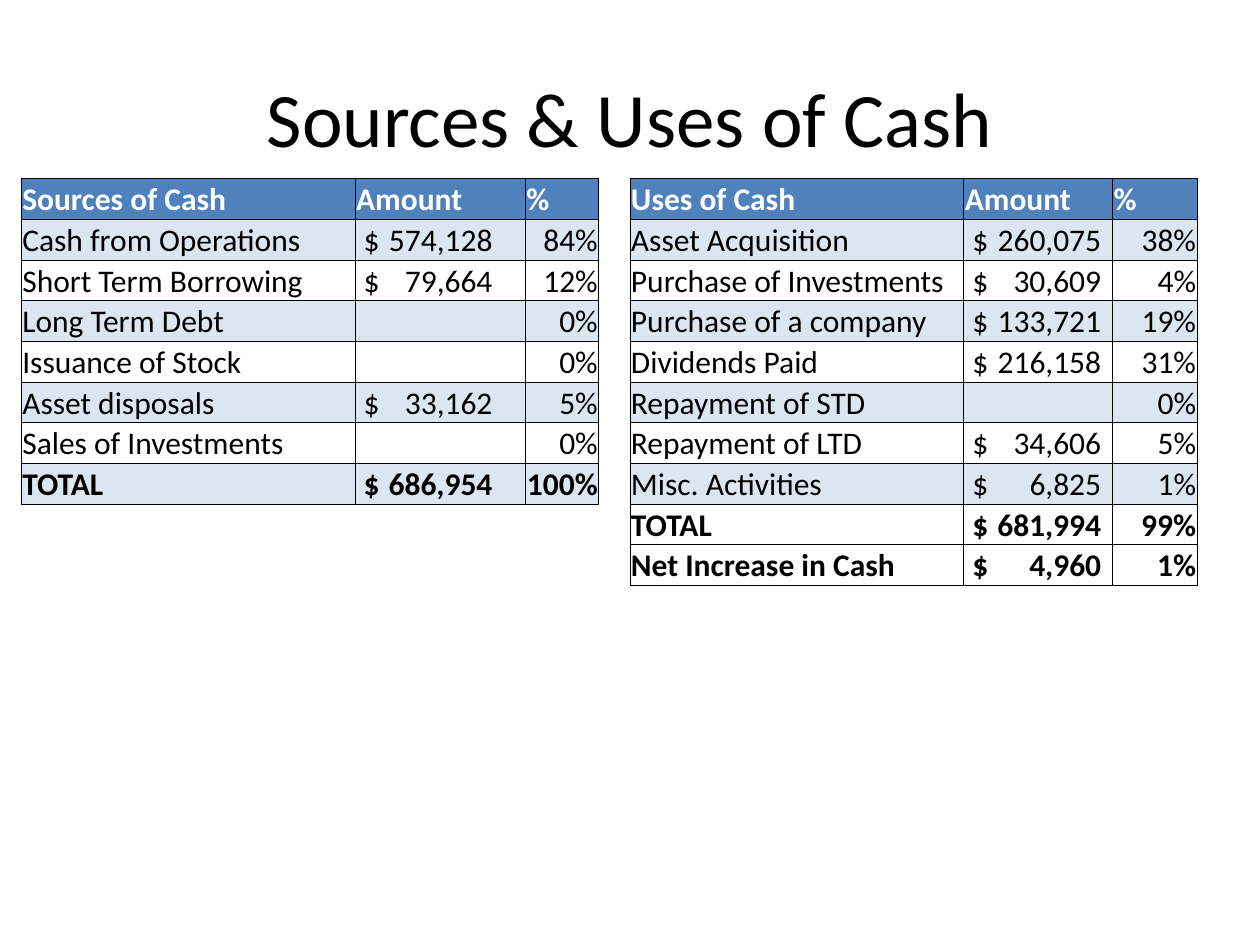
import pptx
import pptx.util
import pptx.dml.color
import pptx.enum.text
import lxml.etree

Cm = pptx.util.Cm
Pt = pptx.util.Pt
Align = pptx.enum.text.PP_ALIGN
Anchor = pptx.enum.text.MSO_ANCHOR
NS = "http://schemas.openxmlformats.org/drawingml/2006/main"

# Amounts are split into sign and number at a right tab stop.
SOURCES = [
    ("Sources of Cash", "Amount", "%"),
    ("Cash from Operations", "574,128", "84%"),
    ("Short Term Borrowing", "79,664", "12%"),
    ("Long Term Debt", "", "0%"),
    ("Issuance of Stock", "", "0%"),
    ("Asset disposals", "33,162", "5%"),
    ("Sales of Investments", "", "0%"),
    ("TOTAL", "686,954", "100%"),
]
USES = [
    ("Uses of Cash", "Amount", "%"),
    ("Asset Acquisition", "260,075", "38%"),
    ("Purchase of Investments", "30,609", "4%"),
    ("Purchase of a company", "133,721", "19%"),
    ("Dividends Paid", "216,158", "31%"),
    ("Repayment of STD", "", "0%"),
    ("Repayment of LTD", "34,606", "5%"),
    ("Misc. Activities", "6,825", "1%"),
    ("TOTAL", "681,994", "99%"),
    ("Net Increase in Cash", "4,960", "1%"),
]
BOLD = ("TOTAL", "Net Increase in Cash")


def color(code):
    return pptx.dml.color.RGBColor.from_string(code)


def node(parent, tag, **attrs):
    return lxml.etree.SubElement(parent, f"{{{NS}}}{tag}", **attrs)


class Deck:
    font = "Calibri"
    ink, head, band, white = "000000", "4F81BD", "DCE6F1", "FFFFFF"
    row = 0.82

    def __init__(self, slide):
        self.slide = slide

    def run(self, para, text, size, tint, bold=False):
        run = para.add_run()
        run.text = text
        run.font.name = self.font
        run.font.size = Pt(size)
        run.font.bold = bold
        run.font.color.rgb = color(tint)

    def title(self, text, left, top, width, height):
        box = self.slide.shapes.add_textbox(Cm(left), Cm(top), Cm(width), Cm(height))
        frame = box.text_frame
        frame.word_wrap = True
        frame.vertical_anchor = Anchor.MIDDLE
        para = frame.paragraphs[0]
        para.alignment = Align.CENTER
        self.run(para, text, 44, self.ink)

    def border(self, cell):
        """Draw a thin line on all four sides; call before the fill is set."""
        props = cell._tc.get_or_add_tcPr()
        for side in ("lnL", "lnR", "lnT", "lnB"):
            line = node(props, side, w=str(Pt(0.5)))
            node(node(line, "solidFill"), "srgbClr", val=self.ink)

    def cell(self, cell, text, fill, tint, bold, kind):
        """Fill one cell; kind is "text", "money" or "share"."""
        cell.margin_left = Cm(0.17 if kind == "money" else 0.02)
        cell.margin_right = cell.margin_top = Cm(0.02)
        cell.margin_bottom = 0
        cell.vertical_anchor = Anchor.BOTTOM
        self.border(cell)
        if fill:
            cell.fill.solid()
            cell.fill.fore_color.rgb = color(fill)
        else:
            cell.fill.background()
        if not text:
            return
        para = cell.text_frame.paragraphs[0]
        para.alignment = Align.RIGHT if kind == "share" else Align.LEFT
        if kind == "money":
            tabs = node(para._p.get_or_add_pPr(), "tabLst")
            node(tabs, "tab", pos=str(Cm(2.6)), algn="r")
            text = "$\t" + text
        self.run(para, text, 18, tint, bold)

    def table(self, rows, left, top, widths):
        frame = self.slide.shapes.add_table(
            len(rows), len(widths), Cm(left), Cm(top),
            Cm(sum(widths)), Cm(self.row * len(rows)))
        table = frame.table
        table.first_row = table.horz_banding = False
        for col, width in zip(table.columns, widths):
            col.width = Cm(width)
        for i, row in enumerate(rows):
            table.rows[i].height = Cm(self.row)
            first = i == 0
            shade = i % 2 and row[0] != "Net Increase in Cash"
            fill = self.head if first else self.band if shade else None
            tint = self.white if first else self.ink
            bold = first or row[0] in BOLD
            kinds = ["text"] * 3 if first else ["text", "money", "share"]
            for j, (text, kind) in enumerate(zip(row, kinds)):
                self.cell(table.cell(i, j), text, fill, tint, bold, kind)


def main():
    show = pptx.Presentation()
    show.slide_width, show.slide_height = Cm(25.4), Cm(19.05)
    deck = Deck(show.slides.add_slide(show.slide_layouts[6]))
    deck.title("Sources & Uses of Cash", 1.27, 0.76, 22.86, 3.18)
    deck.table(SOURCES, 0.43, 3.6, (6.73, 3.43, 1.48))
    deck.table(USES, 12.7, 3.6, (6.73, 3, 1.7))
    show.save("out.pptx")


if __name__ == "__main__":
    main()
